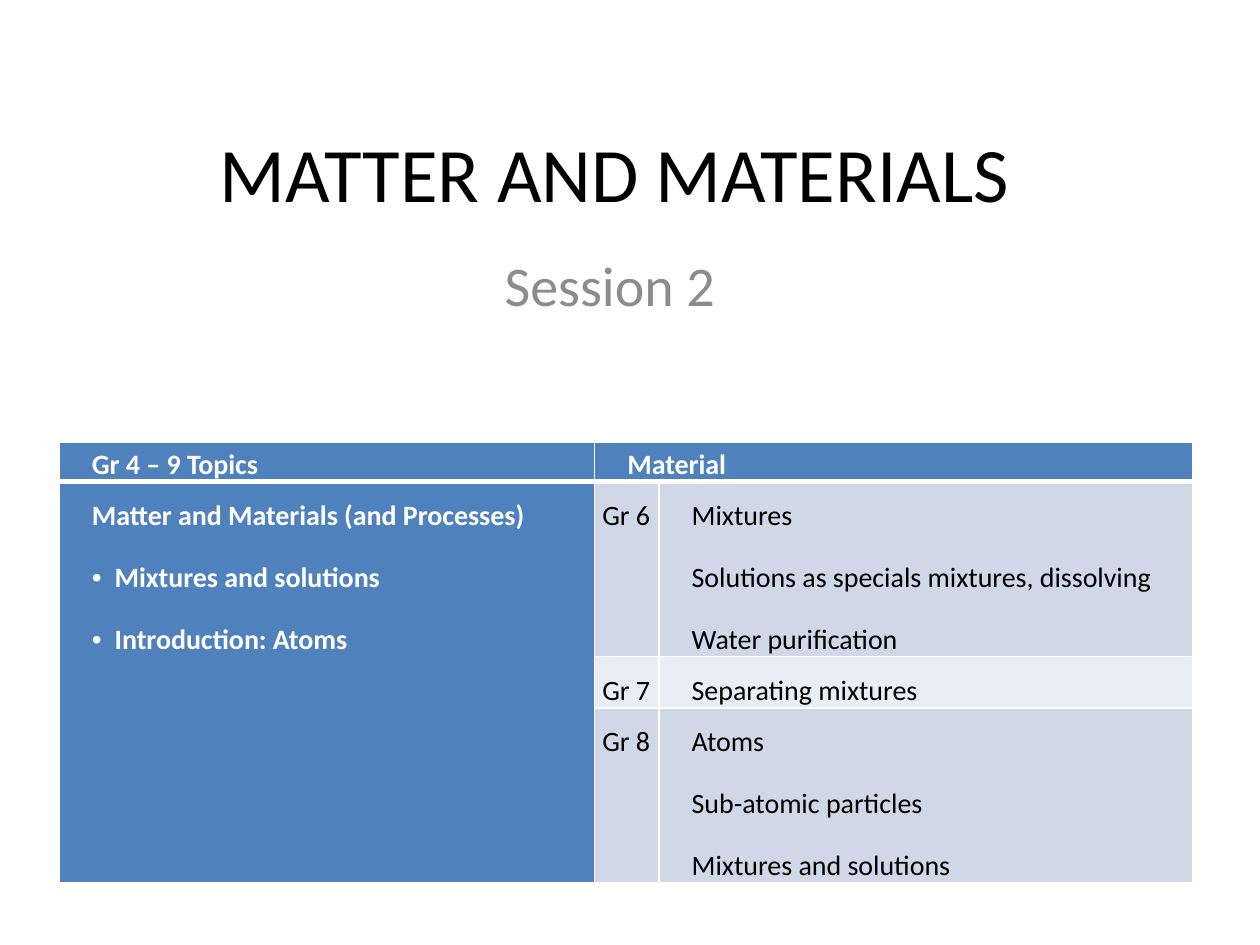
from lxml.etree import SubElement
from pptx import Presentation
from pptx.dml.color import RGBColor
from pptx.enum.text import MSO_ANCHOR, PP_ALIGN
from pptx.oxml import parse_xml
from pptx.oxml.ns import nsdecls, qn
from pptx.util import Inches, Pt

BLUE, BAND, LIGHT = "4F81BD", "D0D8E8", "E9EDF4"
WHITE, BLACK, GRAY = "FFFFFF", "000000", "8C8C8C"

GRADES = [
    ("Gr 6", ["Mixtures", "Solutions as specials mixtures, dissolving",
              "Water purification"]),
    ("Gr 7", ["Separating mixtures"]),
    ("Gr 8", ["Atoms", "Sub-atomic particles", "Mixtures and solutions"]),
]
COL_WIDTHS = [4.25, 0.51, 4.24]
ROW_HEIGHTS = [0.31, 1.37, 0.4, 1.37]


def rgb(value):
    return RGBColor.from_string(value)


def add_text(p, text, size=16, color=BLACK, bold=False, align=None,
             line=None, space=None, left=0, first=0, bullet=None):
    r = p.add_run()
    r.text = text
    r.font.name, r.font.size, r.font.bold = "Calibri", Pt(size), bold
    r.font.color.rgb = rgb(color)
    if align is not None:
        p.alignment = align
    if line:
        p.line_spacing = line
    if space is not None:
        p.space_before = p.space_after = Pt(space)
    pPr = p._p.get_or_add_pPr()
    if left or first:
        pPr.set("marL", str(Inches(left)))
        pPr.set("indent", str(Inches(first)))
    if bullet:
        SubElement(pPr, qn("a:buFont")).set("typeface", "Arial")
        SubElement(pPr, qn("a:buChar")).set("char", bullet)


def fill_placeholder(sp, text, box, anchor, **fmt):
    sp.left, sp.top, sp.width, sp.height = map(Inches, box)
    tf = sp.text_frame
    tf.vertical_anchor = anchor
    add_text(tf.paragraphs[0], text, align=PP_ALIGN.CENTER, **fmt)


def style_cell(cell, fill, bottom=1, top=1):
    cell.margin_left = cell.margin_right = Inches(0.06)
    cell.margin_top = cell.margin_bottom = 0
    cell.fill.solid()
    cell.fill.fore_color.rgb = rgb(fill)
    sides = [("L", 1), ("R", 1), ("T", top), ("B", bottom)]
    for i, (side, width) in enumerate(sides):
        cell._tc.get_or_add_tcPr().insert(i, parse_xml(
            f'<a:ln{side} {nsdecls("a")} w="{Pt(width)}"><a:solidFill>'
            f'<a:srgbClr val="{WHITE}"/></a:solidFill></a:ln{side}>'))


def write_cell(cell, lines, **fmt):
    tf = cell.text_frame
    for i, text in enumerate(lines):
        p = tf.add_paragraph() if i else tf.paragraphs[0]
        add_text(p, text, **fmt)


def add_topics_table(slide):
    table = slide.shapes.add_table(4, 3, Inches(0.47), Inches(3.51),
                                   Inches(9), Inches(3.45)).table
    for col, width in zip(table.columns, COL_WIDTHS):
        col.width = Inches(width)
    for row, height in zip(table.rows, ROW_HEIGHTS):
        row.height = Inches(height)

    # Fills and borders
    for r, band in enumerate([BLUE, BAND, LIGHT, BAND]):
        for c in range(3):
            style_cell(table.cell(r, c), band if c else BLUE,
                       bottom=1 if r else 3, top=3 if r == 1 else 1)
    table.cell(0, 1).merge(table.cell(0, 2))
    table.cell(1, 0).merge(table.cell(3, 0))

    # Header row
    for c, text in enumerate(["Gr 4 – 9 Topics", "Material"]):
        write_cell(table.cell(0, c), [text], color=WHITE, bold=True,
                   line=1.15, space=6, left=0.2)

    # Topic column
    body = dict(line=1.5, space=3)
    topic = dict(body, color=WHITE, bold=True)
    cell = table.cell(1, 0)
    write_cell(cell, ["Matter and Materials (and Processes)"],
               left=0.4, first=-0.2, **topic)
    for text in ["Mixtures and solutions", "Introduction: Atoms"]:
        add_text(cell.text_frame.add_paragraph(), text,
                 left=0.38, first=-0.18, bullet="•", **topic)

    # Material by grade
    for r, (grade, materials) in enumerate(GRADES, start=1):
        write_cell(table.cell(r, 1), [grade], **body)
        write_cell(table.cell(r, 2), materials, left=0.2, **body)


def main():
    prs = Presentation()
    prs.slide_width, prs.slide_height = Inches(10), Inches(7.5)
    slide = prs.slides.add_slide(prs.slide_layouts[0])
    fill_placeholder(slide.shapes.title, "MATTER AND MATERIALS",
                     (0.63, 0.56, 8.5, 1.61), MSO_ANCHOR.MIDDLE, size=44)
    fill_placeholder(slide.placeholders[1], "Session 2",
                     (1.34, 1.94, 7, 1.92), MSO_ANCHOR.TOP,
                     size=32, color=GRAY)
    add_topics_table(slide)
    prs.save("out.pptx")


if __name__ == "__main__":
    main()
